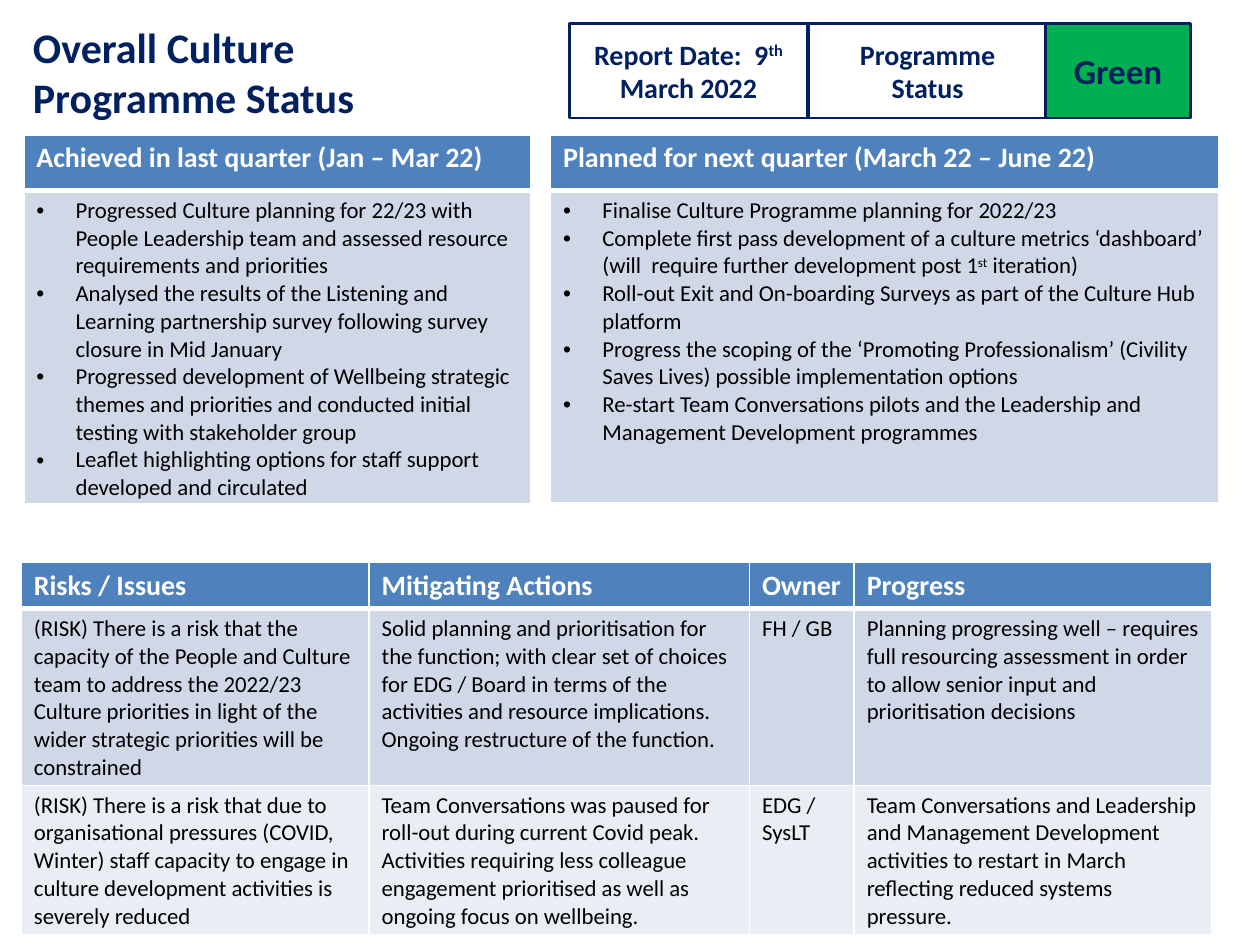
from dataclasses import dataclass

import lxml.etree
import pptx
import pptx.dml.color
import pptx.enum.shapes
import pptx.enum.text
import pptx.oxml.ns
import pptx.util

Cm = pptx.util.Cm
Pt = pptx.util.Pt
RGBColor = pptx.dml.color.RGBColor
qn = pptx.oxml.ns.qn

NAVY = RGBColor(0x00, 0x20, 0x60)
GREEN = RGBColor(0x00, 0xB0, 0x50)
BLUE = RGBColor(0x4F, 0x81, 0xBD)
BAND_DARK = RGBColor(0xD0, 0xD8, 0xE8)
BAND_LIGHT = RGBColor(0xE9, 0xED, 0xF4)
WHITE = RGBColor(0xFF, 0xFF, 0xFF)
BLACK = RGBColor(0x00, 0x00, 0x00)
FONT = "Calibri"
SUPERSCRIPT_MARK = "^"


@dataclass
class StatusBox:
    text: str
    left: float
    width: float
    size: int = 16
    fill: RGBColor | None = None


@dataclass
class TableSpec:
    left: float
    top: float
    columns: list[float]
    rows: list[float]
    cells: list[list[str]]
    bulleted: bool = False


STATUS_BOXES = [
    StatusBox("Programme Status", 16.3, 4.8),
    StatusBox("Report Date:  9^th^ March 2022", 11.48, 4.8),
    StatusBox("Green", 21.08, 2.92, 20, GREEN),
]

ACHIEVED = TableSpec(0.48, 2.72, [10.21], [1.12, 6.3], [
    ["Achieved in last quarter (Jan – Mar 22)"],
    ["\n".join([
        "Progressed Culture planning for 22/23 with People Leadership team and assessed "
        "resource requirements and priorities",
        "Analysed the results of the Listening and Learning partnership survey following "
        "survey closure in Mid January",
        "Progressed development of Wellbeing strategic themes and priorities and conducted "
        "initial testing with stakeholder group",
        "Leaflet highlighting options for staff support developed and circulated",
    ])],
], bulleted=True)

PLANNED = TableSpec(11.1, 2.72, [13.46], [1.12, 6.3], [
    ["Planned for next quarter (March 22 – June 22)"],
    ["\n".join([
        "Finalise Culture Programme planning for 2022/23",
        "Complete first pass development of a culture metrics ‘dashboard’ "
        "(will  require further development post 1^st^ iteration)",
        "Roll-out Exit and On-boarding Surveys as part of the Culture Hub platform",
        "Progress the scoping of the ‘Promoting Professionalism’ (Civility Saves Lives) "
        "possible implementation options",
        "Re-start Team Conversations pilots and the Leadership and Management "
        "Development programmes",
    ])],
], bulleted=True)

RISKS = TableSpec(0.43, 11.33, [7.01, 7.67, 2.11, 7.21], [0.94, 3.56, 3.0], [
    ["Risks / Issues", "Mitigating Actions", "Owner", "Progress"],
    [
        "(RISK) There is a risk that the capacity of the People and Culture team to address "
        "the 2022/23 Culture priorities in light of the wider strategic priorities will be "
        "constrained",
        "Solid planning and prioritisation for the function; with clear set of choices for "
        "EDG / Board in terms of the activities and resource implications. Ongoing "
        "restructure of the function.",
        "FH / GB",
        "Planning progressing well – requires full resourcing assessment in order to allow "
        "senior input and prioritisation decisions",
    ],
    [
        "(RISK) There is a risk that due to organisational pressures (COVID, Winter) staff "
        "capacity to engage in culture development activities is severely reduced",
        "Team Conversations was paused for roll-out during current Covid peak. Activities "
        "requiring less colleague engagement prioritised as well as ongoing focus on "
        "wellbeing.",
        "EDG / SysLT",
        "Team Conversations and Leadership and Management Development activities to restart "
        "in March reflecting reduced systems pressure.",
    ],
])


def write_text(text_frame, text: str, size: int, color: RGBColor, bold: bool, alignment) -> None:
    text_frame.text = text
    for paragraph in text_frame.paragraphs:
        paragraph.alignment = alignment
        parts = paragraph.text.split(SUPERSCRIPT_MARK)
        paragraph.text = parts[0]
        for part in parts[1:]:
            paragraph.add_run().text = part
        for index, run in enumerate(paragraph.runs):
            run.font.name = FONT
            run.font.size = Pt(size)
            run.font.bold = bold
            run.font.color.rgb = color
            if index % 2:
                run.font._element.set("baseline", "30000")


def add_bullet(paragraph) -> None:
    properties = paragraph._p.get_or_add_pPr()
    properties.set("marL", str(Cm(0.79)))
    properties.set("indent", str(-Cm(0.79)))
    lxml.etree.SubElement(properties, qn("a:buFont")).set("typeface", "Arial")
    lxml.etree.SubElement(properties, qn("a:buChar")).set("char", "•")


def set_borders(cell, top: float, bottom: float) -> None:
    properties = cell._tc.get_or_add_tcPr()
    widths = {"a:lnL": 1, "a:lnR": 1, "a:lnT": top, "a:lnB": bottom}
    for index, (tag, width) in enumerate(widths.items()):
        line = lxml.etree.Element(qn(tag), w=str(Pt(width)))
        fill = lxml.etree.SubElement(line, qn("a:solidFill"))
        lxml.etree.SubElement(fill, qn("a:srgbClr")).set("val", str(WHITE))
        properties.insert(index, line)


def draw_title(slide) -> None:
    title = slide.shapes.title
    title.left, title.top, title.width, title.height = Cm(0.41), Cm(0.3), Cm(23.6), Cm(2.31)
    write_text(title.text_frame, "Overall Culture\nProgramme Status", 24, NAVY, True,
               pptx.enum.text.PP_ALIGN.LEFT)
    title.text_frame.vertical_anchor = pptx.enum.text.MSO_ANCHOR.TOP
    title.text_frame.auto_size = pptx.enum.text.MSO_AUTO_SIZE.SHAPE_TO_FIT_TEXT


def draw_status_box(slide, box: StatusBox) -> None:
    shape = slide.shapes.add_shape(pptx.enum.shapes.MSO_SHAPE.RECTANGLE,
                                   Cm(box.left), Cm(0.48), Cm(box.width), Cm(1.9))
    shape.shadow.inherit = False
    if box.fill is None:
        shape.fill.background()
    else:
        shape.fill.solid()
        shape.fill.fore_color.rgb = box.fill
    shape.line.color.rgb = NAVY
    shape.line.width = Pt(1.5)
    shape.text_frame.vertical_anchor = pptx.enum.text.MSO_ANCHOR.MIDDLE
    write_text(shape.text_frame, box.text, box.size, NAVY, True, pptx.enum.text.PP_ALIGN.CENTER)


def draw_table(slide, spec: TableSpec) -> None:
    table = slide.shapes.add_table(len(spec.rows), len(spec.columns), Cm(spec.left), Cm(spec.top),
                                   Cm(sum(spec.columns)), Cm(sum(spec.rows))).table
    for column, width in zip(table.columns, spec.columns):
        column.width = Cm(width)
    for row_index, (row, height) in enumerate(zip(table.rows, spec.rows)):
        row.height = Cm(height)
        header = row_index == 0
        fill = BLUE if header else (BAND_LIGHT, BAND_DARK)[row_index % 2]
        for cell, text in zip(row.cells, spec.cells[row_index]):
            write_text(cell.text_frame, text, 16 if header else 13, WHITE if header else BLACK,
                       header, pptx.enum.text.PP_ALIGN.LEFT)
            cell.fill.solid()
            cell.fill.fore_color.rgb = fill
            set_borders(cell, 3 if row_index == 1 else 1, 3 if header else 1)
            if spec.bulleted and not header:
                for paragraph in cell.text_frame.paragraphs:
                    add_bullet(paragraph)


def main() -> None:
    presentation = pptx.Presentation()
    presentation.slide_width, presentation.slide_height = Cm(25.4), Cm(19.05)
    slide = presentation.slides.add_slide(presentation.slide_layouts[5])
    draw_title(slide)
    draw_table(slide, ACHIEVED)
    for box in STATUS_BOXES:
        draw_status_box(slide, box)
    draw_table(slide, PLANNED)
    draw_table(slide, RISKS)
    presentation.save("out.pptx")


if __name__ == "__main__":
    main()
